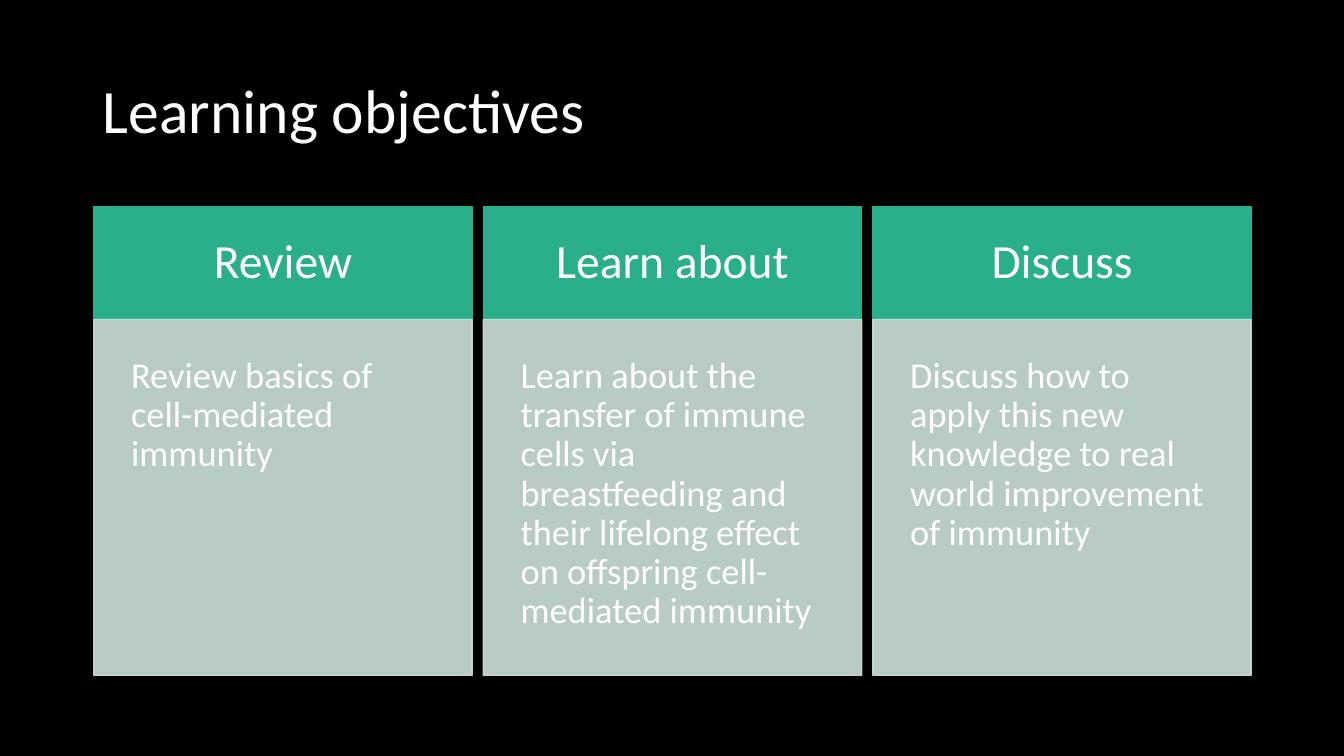
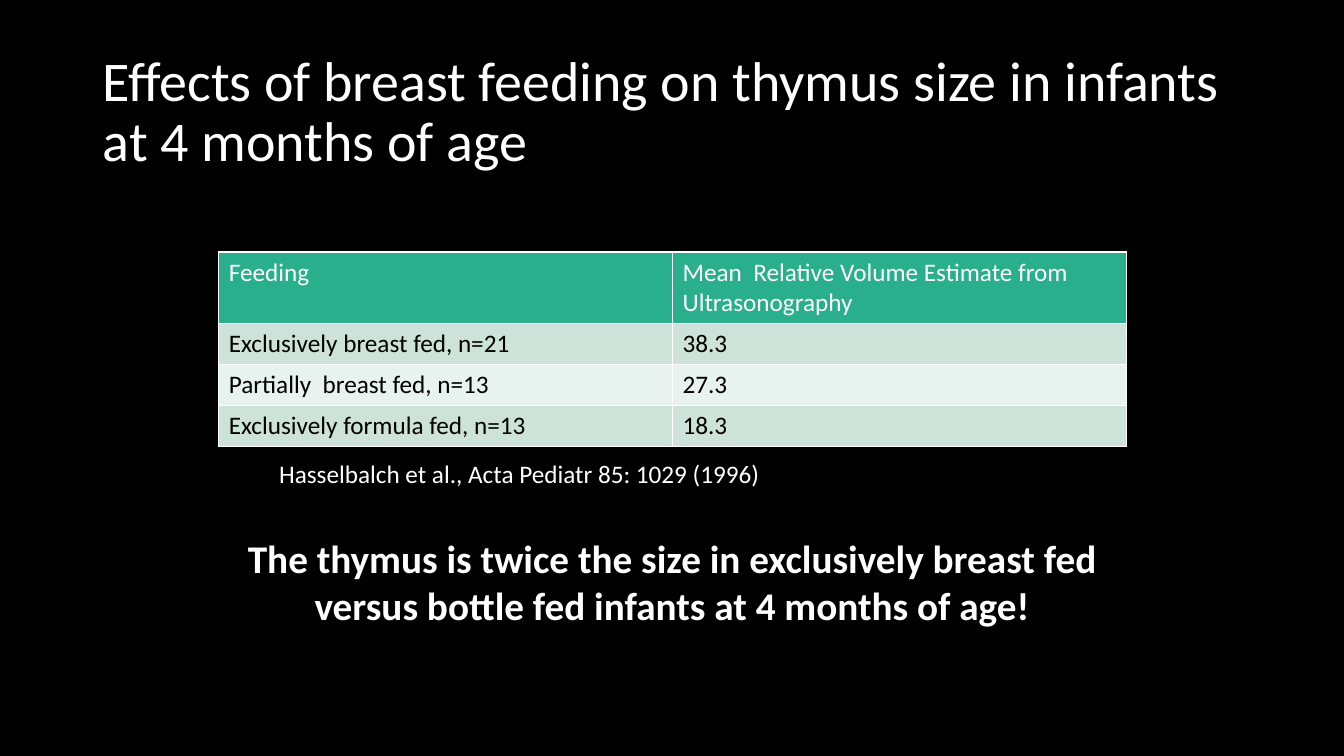
from lxml import etree
from pptx import Presentation
from pptx.dml.color import RGBColor
from pptx.enum import shapes, text
from pptx.oxml import ns
from pptx.util import Inches, Pt

COLORS = {"background": "000000", "light": "FFFFFF", "dark": "000000",
          "accent": "29AF8C", "mint": "CDE3DA", "pale": "E8F2EE"}
FONT = "Calibri"
TITLE_BOX = (0.92, 0.4, 11.5, 1.45)
TITLE_ONLY = 5


def rgb(name):
    return RGBColor.from_string(COLORS[name])


def sub(parent, tag, **attributes):
    return etree.SubElement(parent, ns.qn(tag), attributes)


def paint(fill, color):
    fill.solid()
    fill.fore_color.rgb = rgb(color)


def write(frame, words, size, color="light", bold=False,
          align=text.PP_ALIGN.LEFT, spacing=1.0):
    frame.word_wrap = True
    paragraph = frame.paragraphs[0]
    paragraph.alignment = align
    paragraph.line_spacing = spacing
    run = paragraph.add_run()
    run.text = words
    font = run.font
    font.name, font.size, font.bold = FONT, Pt(size), bold
    font.color.rgb = rgb(color)


def add_titled_slide(prs, words, size):
    slide = prs.slides.add_slide(prs.slide_layouts[TITLE_ONLY])
    title = slide.shapes.title
    title.left, title.top, title.width, title.height = map(Inches, TITLE_BOX)
    frame = title.text_frame
    frame.auto_size = text.MSO_AUTO_SIZE.NONE
    frame.vertical_anchor = text.MSO_ANCHOR.MIDDLE
    write(frame, words, size, spacing=0.9)
    return slide


def add_panel(slide, box, color, inset, opacity=100):
    panel = slide.shapes.add_shape(shapes.MSO_SHAPE.RECTANGLE, *map(Inches, box))
    panel.shadow.inherit = False
    paint(panel.fill, color)
    paint(panel.line.fill, color)
    panel.line.width = Pt(1)
    if opacity < 100:
        for tint in panel._element.spPr.iter(ns.qn("a:srgbClr")):
            sub(tint, "a:alpha", val=str(opacity * 1000))
    frame = panel.text_frame
    frame.margin_left = frame.margin_right = Inches(inset)
    frame.margin_top = frame.margin_bottom = Inches(inset)
    return frame


def add_objective(slide, box, heading, detail):
    left, top, width, height = box
    head_height = 1.12
    # Heading band
    band = add_panel(slide, (left, top, width, head_height), "accent", 0.3)
    band.vertical_anchor = text.MSO_ANCHOR.MIDDLE
    write(band, heading, 34, align=text.PP_ALIGN.CENTER, spacing=0.9)
    # Detail panel
    body = add_panel(slide, (left, top + head_height, width, height - head_height),
                     "mint", 0.37, opacity=90)
    body.vertical_anchor = text.MSO_ANCHOR.TOP
    write(body, detail, 26, spacing=0.9)


def add_objectives(slide, box, objectives, gap=0.11):
    left, top, width, height = box
    count = len(objectives)
    card_width = (width - gap * (count - 1)) / count
    for i, (heading, detail) in enumerate(objectives):
        card = (left + i * (card_width + gap), top, card_width, height)
        add_objective(slide, card, heading, detail)


def add_borders(cell, color, width):
    properties = cell._tc.get_or_add_tcPr()
    for side in ("a:lnL", "a:lnR", "a:lnT", "a:lnB"):
        line = sub(properties, side, w=str(Pt(width)))
        sub(sub(line, "a:solidFill"), "a:srgbClr", val=COLORS[color])


def add_feeding_table(slide, box, rows, head_height=0.7):
    frame = slide.shapes.add_table(len(rows), len(rows[0]), *map(Inches, box))
    table = frame.table
    table.horz_banding = False
    row_height = (box[3] - head_height) / (len(rows) - 1)
    for r, row in enumerate(rows):
        header = r == 0
        table.rows[r].height = Inches(head_height if header else row_height)
        fill = "accent" if header else ("pale", "mint")[r % 2]
        for c, words in enumerate(row):
            cell = table.cell(r, c)
            add_borders(cell, "light", 1)
            paint(cell.fill, fill)
            write(cell.text_frame, words, 18, "light" if header else "dark")


def add_note(slide, box, words, size, **style):
    note = slide.shapes.add_textbox(*map(Inches, box))
    write(note.text_frame, words, size, **style)


def build_objectives(prs):
    slide = add_titled_slide(prs, "Learning objectives", 44)
    add_objectives(slide, (0.93, 2.05, 11.48, 4.65), [
        ("Review", "Review basics of cell-mediated immunity"),
        ("Learn about", "Learn about the transfer of immune cells via breastfeeding "
                        "and their lifelong effect on offspring cell-mediated immunity"),
        ("Discuss", "Discuss how to apply this new knowledge to real world "
                    "improvement of immunity"),
    ])


def build_thymus(prs):
    slide = add_titled_slide(
        prs, "Effects of breast feeding on thymus size in infants at 4 months of age", 40)
    add_feeding_table(slide, (2.17, 2.5, 9, 1.92), [
        ("Feeding", "Mean  Relative Volume Estimate from Ultrasonography"),
        ("Exclusively breast fed, n=21", "38.3"),
        ("Partially  breast fed, n=13", "27.3"),
        ("Exclusively formula fed, n=13", "18.3"),
    ])
    # Citation and conclusion
    add_note(slide, (2.67, 4.5, 6, 0.4),
             "Hasselbalch et al., Acta Pediatr 85: 1029 (1996)", 18)
    add_note(slide, (2.25, 5.25, 8.83, 1.04),
             "The thymus is twice the size in exclusively breast fed versus "
             "bottle fed infants at 4 months of age!", 28,
             bold=True, align=text.PP_ALIGN.CENTER)


def main():
    prs = Presentation()
    prs.slide_width, prs.slide_height = Inches(13.33), Inches(7.5)
    paint(prs.slide_master.background.fill, "background")
    build_objectives(prs)
    build_thymus(prs)
    prs.save("out.pptx")


if __name__ == "__main__":
    main()
